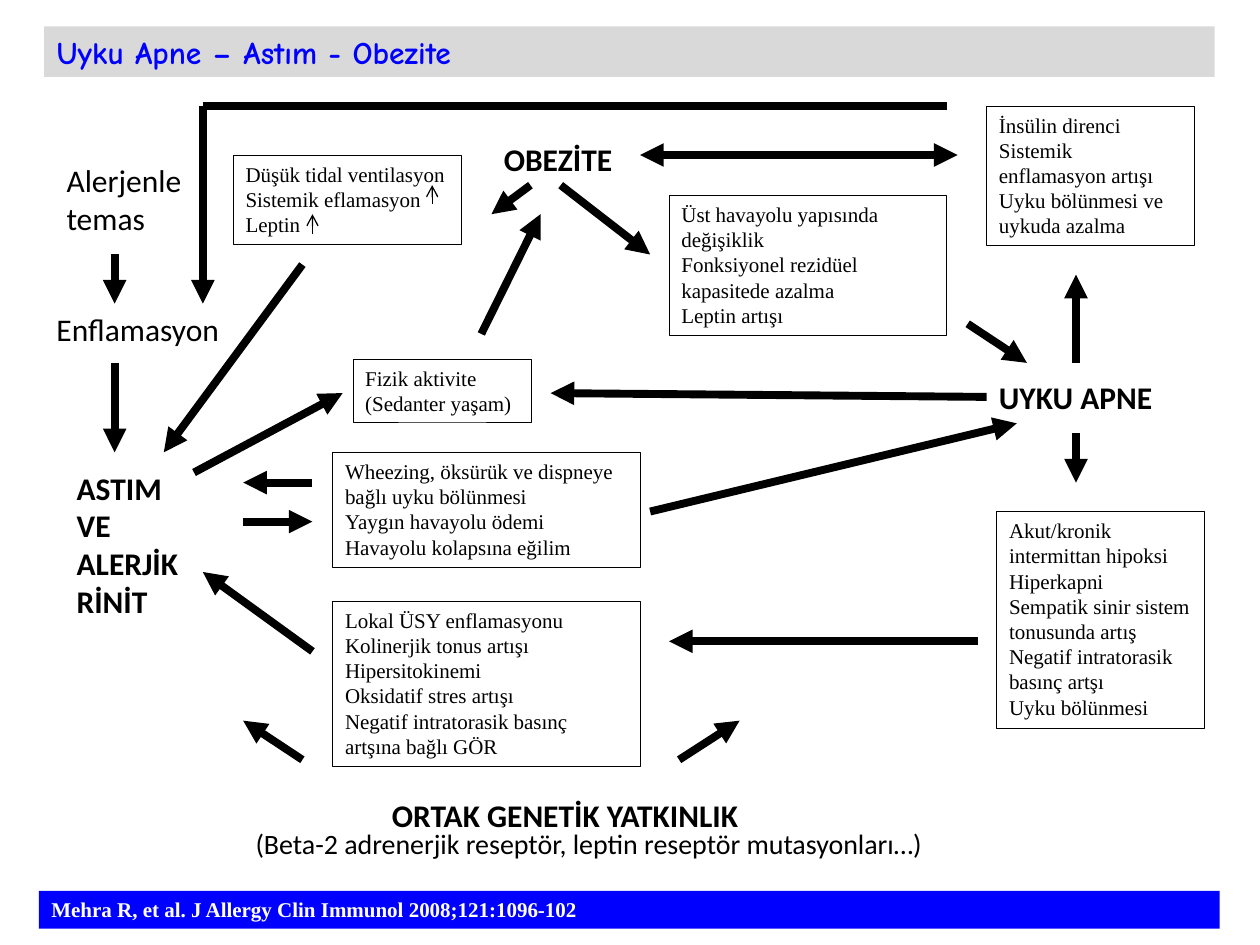
from lxml import etree
from pptx import Presentation
from pptx.dml.color import RGBColor
from pptx.enum.shapes import MSO_CONNECTOR, MSO_SHAPE
from pptx.enum.text import MSO_ANCHOR, MSO_AUTO_SIZE, PP_ALIGN
from pptx.oxml.ns import qn
from pptx.util import Inches, Pt

RECT = MSO_SHAPE.RECTANGLE
STRAIGHT = MSO_CONNECTOR.STRAIGHT
TOP, MIDDLE = MSO_ANCHOR.TOP, MSO_ANCHOR.MIDDLE
LEFT, CENTER = PP_ALIGN.LEFT, PP_ALIGN.CENTER
NO_FIT = MSO_AUTO_SIZE.NONE
COLUMNS, ROWS = 100, 75
UNIT = Inches(10) // COLUMNS
SERIF, SANS, COMIC = "Times New Roman", "Calibri", "Comic Neue"
BLACK, WHITE, BLUE, GREY = "000000", "FFFFFF", "0000FF", "D9D9D9"

FACTORS = [
    ((26.4, 47.7, 24.4, 13.1), ["Lokal ÜSY enflamasyonu", "Kolinerjik tonus artışı",
                                "Hipersitokinemi", "Oksidatif stres artışı",
                                "Negatif intratorasik basınç artşına bağlı GÖR"]),
    ((26.4, 35.9, 24.4, 9.1), ["Wheezing, öksürük ve dispneye bağlı uyku bölünmesi",
                               "Yaygın havayolu ödemi", "Havayolu kolapsına eğilim"]),
    ((28, 28.5, 14.2, 5), ["Fizik aktivite", "(Sedanter yaşam)"]),
    ((18.5, 12.3, 18.1, 7.1), ["Düşük tidal ventilasyon", "Sistemik eflamasyon", "Leptin"]),
    ((53.1, 15.5, 22, 11.1), ["Üst havayolu yapısında değişiklik",
                              "Fonksiyonel rezidüel kapasitede azalma", "Leptin artışı"]),
    ((78.3, 8.4, 16.5, 11.1), ["İnsülin direnci", "Sistemik enflamasyon artışı",
                               "Uyku bölünmesi ve uykuda azalma"]),
    ((79.1, 40.6, 16.5, 17.2), ["Akut/kronik intermittan hipoksi", "Hiperkapni",
                                "Sempatik sinir sistem tonusunda artış",
                                "Negatif intratorasik basınç artşı", "Uyku bölünmesi"]),
]
CONDITIONS = [
    ((5.1, 36.7, 11.8, 13.1), "ASTIM VE ALERJİK RİNİT", 18, True, LEFT),
    ((78.3, 29.5, 15.7, 4), "UYKU APNE", 18, True, LEFT),
    ((39, 10.6, 11, 4), "OBEZİTE", 18, True, LEFT),
    ((4.3, 12.3, 11.8, 7.1), "Alerjenle temas", 18, False, LEFT),
    ((3.5, 24.1, 15, 4), "Enflamasyon", 18, False, LEFT),
    ((17.7, 62.7, 54.3, 4), "ORTAK GENETİK YATKINLIK", 18, True, CENTER),
    ((19.3, 65.1, 62.2, 3.7), "(Beta-2 adrenerjik reseptör, leptin reseptör mutasyonları…)",
     16, False, LEFT),
]
INCREASES = [(34.3, 16.2, 34.3, 14.7), (24.8, 18.6, 24.8, 17)]
LINKS = [
    (85.4, 34.4, 85.4, 38.3), (85.4, 28.8, 85.4, 21.8), (16.1, 8.4, 16.1, 24.1),
    (9.1, 20.2, 9.1, 24.1), (9.1, 28.8, 9.1, 35.9), (24, 21, 13, 35.9),
    (15.4, 37.5, 27.2, 31.2), (24.8, 38.3, 19.3, 38.3), (19.3, 41.4, 24.8, 41.4),
    (24.8, 51.7, 16.1, 45.4), (76.8, 25.7, 81.5, 28.8), (78.3, 31.5, 43.7, 31.2),
    (51.6, 40.6, 80.7, 33.6), (77.6, 50.9, 53.1, 50.9), (53.9, 60.3, 58.7, 57.2),
    (24, 60.3, 19.3, 57.2), (42.1, 14.7, 39, 17), (44.5, 14.7, 51.6, 20.2),
    (38.2, 26.5, 42.9, 17),
]
TWO_WAY = (76, 12.3, 50.8, 12.3)
FEEDBACK_BAR = (75.2, 8.4, 16.1, 8.4)


def grid(values):
    """Turn grid columns and rows into slide lengths."""
    return [round(v * UNIT) for v in values]


def color(hex_string):
    """Return the colour for a hex string."""
    return RGBColor.from_string(hex_string)


def write(sp, lines, font, size, ink=BLACK, bold=False, align=LEFT, anchor=TOP):
    """Fill a shape with evenly formatted paragraphs."""
    tf = sp.text_frame
    tf.word_wrap, tf.auto_size, tf.vertical_anchor = True, NO_FIT, anchor
    tf.margin_left = tf.margin_right = UNIT
    tf.margin_top = tf.margin_bottom = UNIT // 2
    tf.text = "\n".join(lines)
    for p in tf.paragraphs:
        p.alignment = align
        p.font.name, p.font.size, p.font.bold = font, Pt(size), bold
        p.font.color.rgb = color(ink)


def add_title(s, box, text):
    """Place the title on its grey band."""
    sp = s.shapes.title
    sp.left, sp.top, sp.width, sp.height = grid(box)
    sp.fill.solid()
    sp.fill.fore_color.rgb = color(GREY)
    write(sp, [text], COMIC, 18, BLUE, True, anchor=MIDDLE)


def add_factor(s, box, lines):
    """Draw a thinly framed list of linking factors."""
    sp = s.shapes.add_shape(RECT, *grid(box))
    sp.shadow.inherit = False
    sp.fill.background()
    sp.line.color.rgb = color(BLACK)
    sp.line.width = Pt(0.25)
    write(sp, lines, SERIF, 12)


def add_condition(s, box, text, size, bold, align):
    """Write an unframed label."""
    write(s.shapes.add_textbox(*grid(box)), [text], SANS, size, bold=bold, align=align)


def add_link(s, ends, width=4.5, head=None, tail="triangle"):
    """Draw a straight black line with optional arrowheads."""
    cn = s.shapes.add_connector(STRAIGHT, *grid(ends))
    cn.line.color.rgb = color(BLACK)
    cn.line.width = Pt(width)
    ln = cn.line._get_or_add_ln()
    for tag, kind in (("a:headEnd", head), ("a:tailEnd", tail)):
        if kind:
            etree.SubElement(ln, qn(tag), type=kind)
    etree.SubElement(cn._element.spPr, qn("a:effectLst"))


def add_citation(s, box, text):
    """Draw the blue citation band."""
    sp = s.shapes.add_shape(RECT, *grid(box))
    sp.shadow.inherit = False
    sp.fill.solid()
    sp.fill.fore_color.rgb = color(BLUE)
    sp.line.fill.background()
    write(sp, [text], SERIF, 12, WHITE, True)


def main():
    """Build and save the slide."""
    prs = Presentation()
    prs.slide_width, prs.slide_height = COLUMNS * UNIT, ROWS * UNIT
    s = prs.slides.add_slide(prs.slide_layouts[5])
    add_title(s, (3.5, 2.1, 92.9, 4), "Uyku Apne – Astım - Obezite")
    for box, lines in FACTORS:
        add_factor(s, box, lines)
    for condition in CONDITIONS:
        add_condition(s, *condition)
    for ends in INCREASES:
        add_link(s, ends, 0.75, tail="arrow")
    for ends in LINKS:
        add_link(s, ends)
    add_link(s, TWO_WAY, head="triangle")
    add_link(s, FEEDBACK_BAR, tail=None)
    add_citation(s, (3.1, 70.7, 93.7, 3),
                 "Mehra R, et al. J Allergy Clin Immunol 2008;121:1096-102")
    prs.save("out.pptx")


if __name__ == "__main__":
    main()
